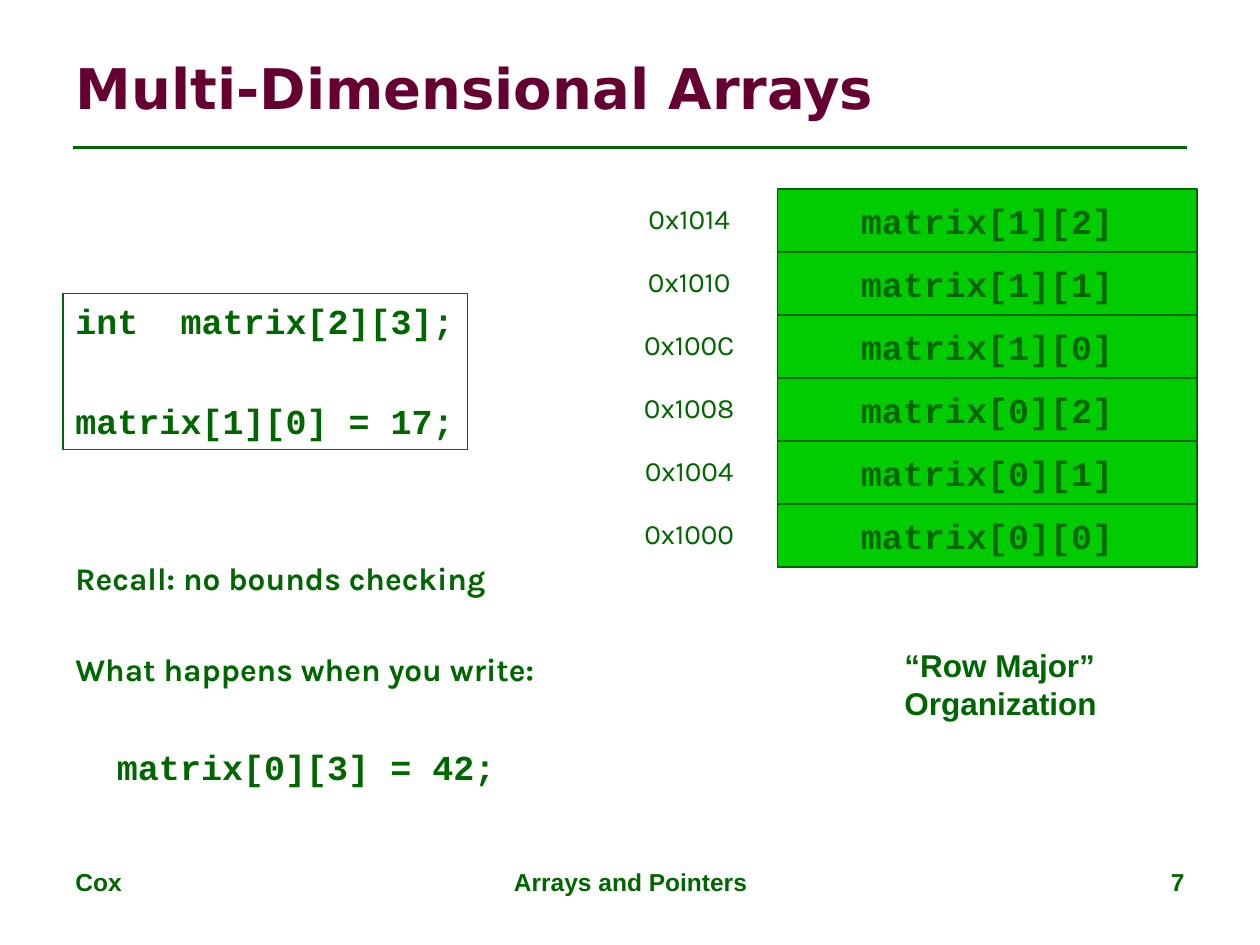
"""Build the slide on the row-major layout of multi-dimensional arrays."""
from lxml import etree
from pptx import Presentation
from pptx.dml.color import RGBColor
from pptx.enum.shapes import MSO_CONNECTOR, MSO_SHAPE
from pptx.enum.text import MSO_ANCHOR, MSO_AUTO_SIZE, PP_ALIGN
from pptx.oxml.ns import qn
from pptx.util import Inches, Pt

STRAIGHT = MSO_CONNECTOR.STRAIGHT
RECTANGLE = MSO_SHAPE.RECTANGLE
TOP, MIDDLE = MSO_ANCHOR.TOP, MSO_ANCHOR.MIDDLE
LEFT, CENTER, RIGHT = PP_ALIGN.LEFT, PP_ALIGN.CENTER, PP_ALIGN.RIGHT
NO_FIT = MSO_AUTO_SIZE.NONE

GREEN, BRIGHT_GREEN, MAROON = "006600", "00CC00", "660033"
CODE = {"name": "Courier New", "size": Pt(20), "bold": True}
ADDRESS = {"name": "Karla", "size": Pt(16), "bold": False}
QUESTION = {"name": "Karla", "size": Pt(18), "bold": True}
CAPTION = {"name": "Arial", "size": Pt(18), "bold": True}
FOOTER = {"name": "Arial", "size": Pt(14), "bold": True}
TITLE = {"name": "DejaVu Sans", "size": Pt(32), "bold": True}

ROWS, COLUMNS, INT_SIZE, BASE_ADDRESS = 2, 3, 4, 0x1000
CELL_LEFT, CELL_WIDTH, CELL_HEIGHT, BOTTOM_CELL_TOP = 6.17, 3.33, 0.5, 4


def color(value):
    return RGBColor.from_string(value)


class SlideBuilder:
    """Holds the style and the current slide."""

    def __init__(self, slide, ink=GREEN):
        self.slide = slide
        self.ink = ink

    def fill_text(self, shape, lines, align=LEFT, anchor=TOP, wrap=False, ink=None):
        """Fill a shape with (text, font, space before, indent) lines."""
        frame = shape.text_frame
        settings = {"word_wrap": wrap, "vertical_anchor": anchor, "auto_size": NO_FIT}
        for name, value in settings.items():
            setattr(frame, name, value)
        for index, (text, font, space, indent) in enumerate(lines):
            paragraph = frame.add_paragraph() if index else frame.paragraphs[0]
            paragraph.alignment = align
            paragraph.space_before = Pt(space)
            if indent:
                paragraph._p.get_or_add_pPr().set("marL", str(Inches(indent)))
            run = paragraph.add_run()
            run.text = text
            for name, value in font.items():
                setattr(run.font, name, value)
            run.font.color.rgb = color(ink or self.ink)

    def title(self, text, box):
        shape = self.slide.shapes.title
        for name, value in zip(("left", "top", "width", "height"), box):
            setattr(shape, name, Inches(value))
        self.fill_text(shape, [(text, TITLE, 0, 0)], anchor=MIDDLE, wrap=True, ink=MAROON)

    def text(self, box, lines, **layout):
        shape = self.slide.shapes.add_textbox(*map(Inches, box))
        self.fill_text(shape, lines, **layout)

    def rectangle(self, box, lines, fill=None, **layout):
        shape = self.slide.shapes.add_shape(RECTANGLE, *map(Inches, box))
        shape.shadow.inherit = False
        if fill:
            shape.fill.solid()
            shape.fill.fore_color.rgb = color(fill)
        else:
            shape.fill.background()
        shape.line.color.rgb = color(self.ink)
        shape.line.width = Pt(0.75)
        self.fill_text(shape, lines, **layout)

    def rule(self, start, end, width):
        connector = self.slide.shapes.add_connector(STRAIGHT, *map(Inches, start + end))
        connector.line.color.rgb = color(self.ink)
        connector.line.width = Pt(width)
        etree.SubElement(connector._element.spPr, qn("a:effectLst"))


def main():
    presentation = Presentation()
    presentation.slide_width, presentation.slide_height = Inches(10), Inches(7.5)
    slide = presentation.slides.add_slide(presentation.slide_layouts[5])
    builder = SlideBuilder(slide)

    builder.title("Multi-Dimensional Arrays", (0.5, 0.3, 9, 0.78))
    builder.rule((0.58, 1.17), (9.42, 1.17), 1.5)

    builder.rectangle((0.5, 2.33, 3.21, 1.24), [
        ("int  matrix[2][3];", CODE, 4, 0),
        ("matrix[1][0] = 17;", CODE, 33, 0),
    ])

    for index in range(ROWS * COLUMNS):
        row, column = divmod(index, COLUMNS)
        top = BOTTOM_CELL_TOP - index * CELL_HEIGHT
        address = f"0x{BASE_ADDRESS + index * INT_SIZE:X}"
        builder.rectangle((CELL_LEFT, top, CELL_WIDTH, CELL_HEIGHT),
                          [(f"matrix[{row}][{column}]", CODE, 0, 0)],
                          fill=BRIGHT_GREEN, align=CENTER, anchor=MIDDLE)
        builder.text((5.01, top + 0.05, 0.92, 0.37),
                     [(address, ADDRESS, 0, 0)], align=CENTER)

    builder.text((0.5, 4.39, 4.12, 1.92), [
        ("Recall: no bounds checking", QUESTION, 4, 0),
        ("What happens when you write:", QUESTION, 30, 0),
        ("matrix[0][3] = 42;", CODE, 33, 0.33),
    ])
    builder.text((7.08, 5.08, 1.73, 0.7), [
        ("“Row Major”", CAPTION, 0, 0),
        ("Organization", CAPTION, 0, 0),
    ])

    for left, width, text, align in (
        (0.5, 2.33, "Cox", LEFT),
        (3.42, 3.17, "Arrays and Pointers", CENTER),
        (7.17, 2.33, "7", RIGHT),
    ):
        builder.text((left, 6.83, width, 0.52), [(text, FOOTER, 0, 0)],
                     align=align, wrap=True)

    presentation.save("out.pptx")


if __name__ == "__main__":
    main()
